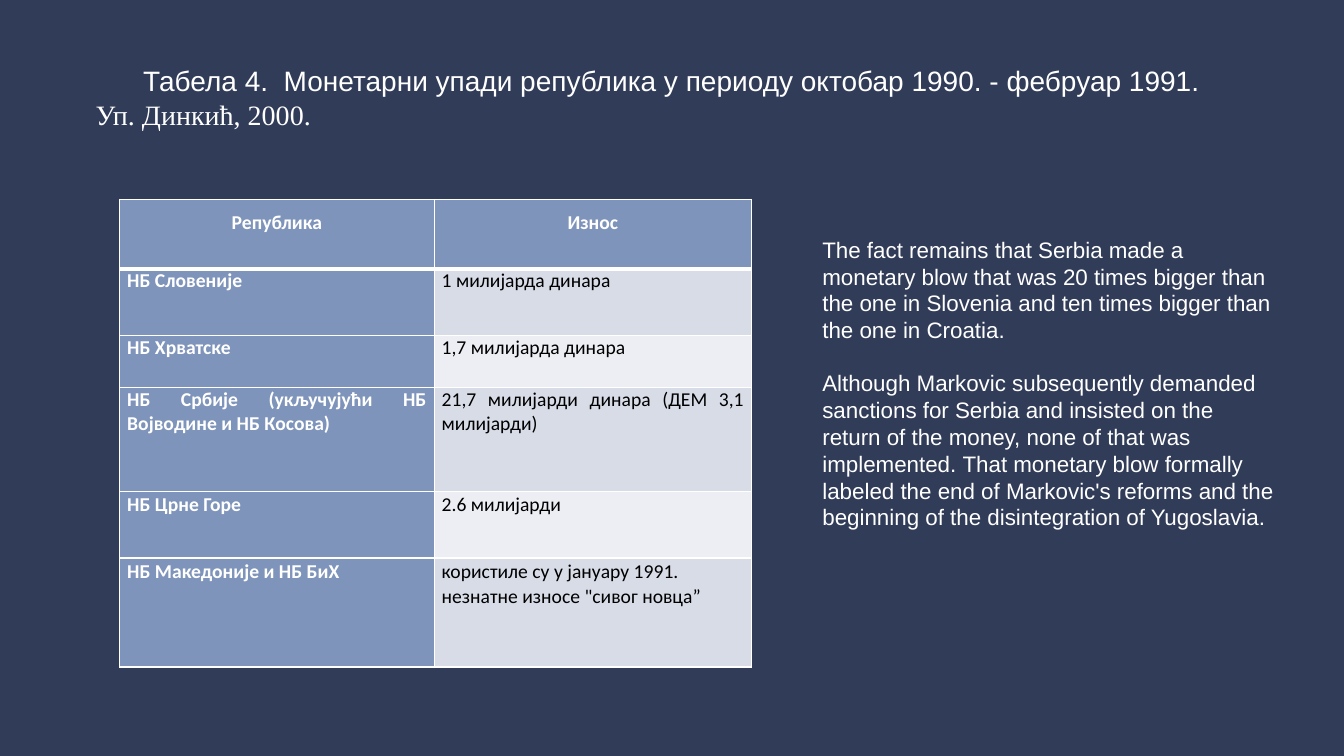
from lxml.etree import SubElement
from pptx import Presentation
from pptx.dml.color import RGBColor
from pptx.enum.shapes import MSO_SHAPE
from pptx.enum.text import MSO_ANCHOR, PP_ALIGN
from pptx.oxml import parse_xml
from pptx.oxml.ns import nsdecls, qn
from pptx.util import Pt

# Colours
WHITE = RGBColor(0xFF, 0xFF, 0xFF)
BLACK = RGBColor(0, 0, 0)
NIGHT = RGBColor(0x24, 0x2C, 0x41)
NAVY = RGBColor(0x33, 0x3E, 0x5B)
BLUE = RGBColor(0x7F, 0x94, 0xBA)
BANDS = [RGBColor(0xD8, 0xDC, 0xE7), RGBColor(0xEC, 0xEE, 0xF3)]

# Content
TITLE = [
    ("Табела 4.  Монетарни упади република у периоду октобар 1990. - фебруар 1991.", "Arial"),
    ("Уп. Динкић, 2000.", "Times New Roman"),
]
HEAD = {"alignment": PP_ALIGN.CENTER, "line_spacing": 1.5,
        "space_before": Pt(9.6), "space_after": Pt(9.6)}
FULL = {"alignment": PP_ALIGN.JUSTIFY, "space_before": Pt(9.6), "space_after": Pt(9.6)}
LEFT = {"alignment": PP_ALIGN.LEFT, "line_spacing": 1.07, "space_after": Pt(8)}
ROWS = [  # height, paragraph format, cells
    (49.7, HEAD, ("Република", "Износ")),
    (47.5, FULL, ("НБ Словеније", "1 милијарда динара")),
    (37.4, FULL, ("НБ Хрватске", "1,7 милијарда динара")),
    (74.2, FULL, ("НБ Србије (укључујући НБ Војводине и НБ Косова)",
                  "21,7 милијарди динара (ДЕМ 3,1 милијарди)")),
    (47.5, LEFT, ("НБ Црне Горе", "2.6 милијарди")),
    (77.8, LEFT, ("НБ Македоније и НБ БиХ",
                  "користиле су у јануару 1991. незнатне износе \"сивог новца”")),
]
COLS = [224.6, 226.8]
NOTES = [
    "The fact remains that Serbia made a monetary blow that was 20 times bigger "
    "than the one in Slovenia and ten times bigger than the one in Croatia.",
    "Although Markovic subsequently demanded sanctions for Serbia and insisted on "
    "the return of the money, none of that was implemented.\u00a0That monetary blow "
    "formally labeled the end of Markovic's reforms and the beginning of the "
    "disintegration of Yugoslavia.",
]


def style(item, form):
    for name, value in form.items():
        setattr(item, name, value)


def write(para, text, face, size, color=WHITE, bold=False):
    run = para.add_run()
    run.text = text
    style(run.font, {"name": face, "size": Pt(size), "bold": bold})
    run.font.color.rgb = color


def add_box(slide, left, top, width, height, form):
    frame = slide.shapes.add_textbox(Pt(left), Pt(top), Pt(width), Pt(height)).text_frame
    style(frame, {"word_wrap": True, **form})
    return frame


def next_para(frame, index):
    return frame.add_paragraph() if index else frame.paragraphs[0]


def edge(cell, sides):
    props = cell._tc.get_or_add_tcPr()
    for place, (side, width) in enumerate(sides.items()):
        props.insert(place, parse_xml(
            f'<a:ln{side} {nsdecls("a")} w="{Pt(width)}"><a:solidFill>'
            f'<a:srgbClr val="{WHITE}"/></a:solidFill></a:ln{side}>'))


def add_grid(slide):
    total = sum(row[0] for row in ROWS)
    grid = slide.shapes.add_table(len(ROWS), len(COLS), Pt(85.5), Pt(142.4),
                                  Pt(sum(COLS)), Pt(total)).table
    for col, width in zip(grid.columns, COLS):
        col.width = Pt(width)
    for r, (height, form, texts) in enumerate(ROWS):
        grid.rows[r].height = Pt(height)
        for c, text in enumerate(texts):
            cell = grid.cell(r, c)
            label = r == 0 or c == 0
            style(cell, {"margin_left": Pt(5.4), "margin_right": Pt(5.4),
                         "margin_top": 0, "margin_bottom": 0})
            cell.fill.solid()
            cell.fill.fore_color.rgb = BLUE if label else BANDS[(r - 1) % 2]
            # A thick rule parts the header from the body
            edge(cell, {"L": 1, "R": 1, "T": 3 if r == 1 else 1, "B": 3 if r == 0 else 1})
            para = cell.text_frame.paragraphs[0]
            style(para, form)
            write(para, text, "Calibri", 14, WHITE if label else BLACK, label)


def main():
    deck = Presentation()
    style(deck, {"slide_width": Pt(960), "slide_height": Pt(540)})
    slide = deck.slides.add_slide(deck.slide_layouts[6])

    # Background with a translucent veil
    back = slide.background.fill
    back.solid()
    back.fore_color.rgb = NIGHT
    veil = slide.shapes.add_shape(MSO_SHAPE.RECTANGLE, 0, 0, Pt(960), Pt(540))
    veil.shadow.inherit = False
    veil.line.fill.background()
    veil.fill.solid()
    veil.fill.fore_color.rgb = NAVY
    tint = veil._element.spPr.find(".//" + qn("a:srgbClr"))
    SubElement(tint, qn("a:alpha"), val="90000")

    # Title
    frame = add_box(slide, 61.2, 28.8, 837.4, 104.4,
                    {"vertical_anchor": MSO_ANCHOR.MIDDLE, "margin_bottom": Pt(27)})
    for i, (text, face) in enumerate(TITLE):
        para = next_para(frame, i)
        write(para, text, face, 20)
        if i == 0:
            para._p.get_or_add_pPr().set("indent", str(Pt(34)))

    # Table
    add_grid(slide)

    # Comment at the right
    frame = add_box(slide, 580.3, 164.9, 339.1, 259.2, {})
    for i, text in enumerate(NOTES):
        para = next_para(frame, i)
        para.space_before = Pt(18.6 * i)
        write(para, text, "Arial", 16)

    deck.save("out.pptx")


if __name__ == "__main__":
    main()
